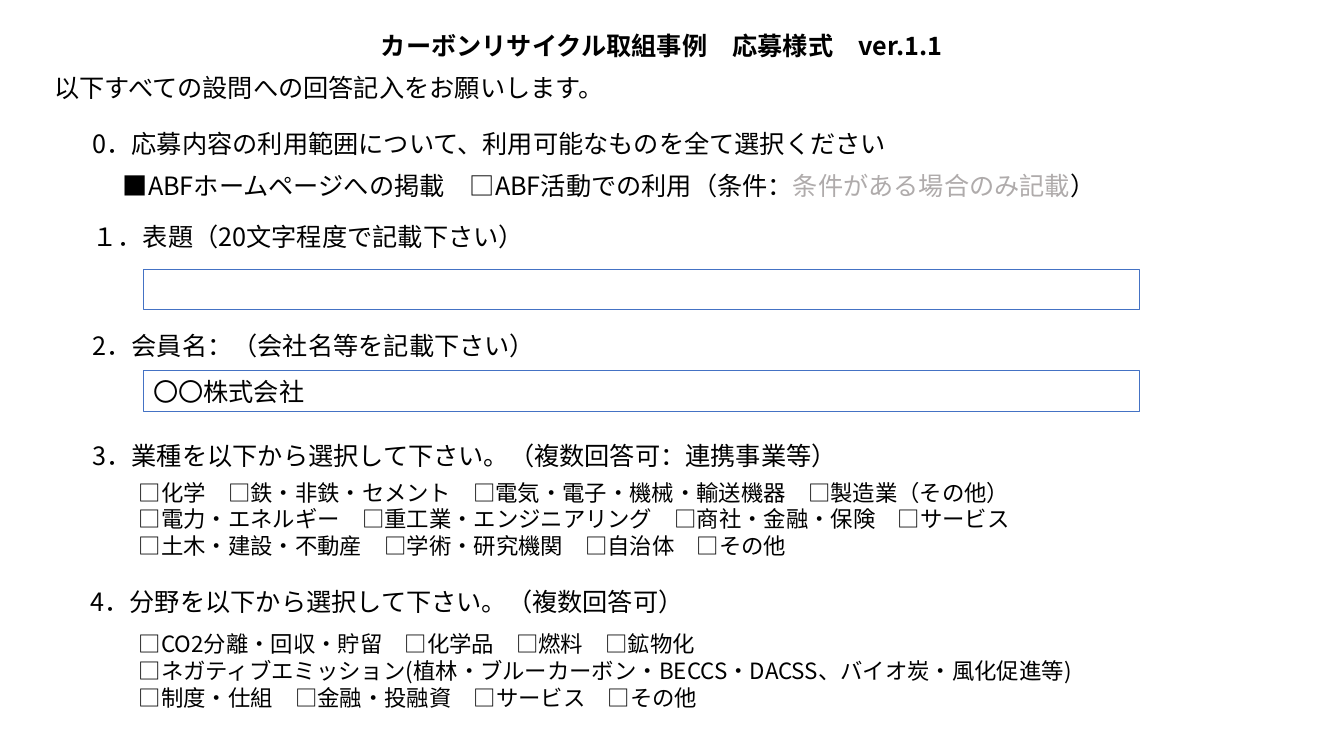
"""Build the application form slide with its questions, entry boxes and check lists."""
from lxml import etree
from pptx import Presentation, util as u
from pptx.dml.color import RGBColor
from pptx.enum import shapes, text
from pptx.oxml.ns import qn

THEME = {
    "font": "Noto Sans CJK JP",
    "ink": "000000",
    "hint": "AFABAB",
    "edge": "4472C4",
    "head": 18,
    "list": 16,
    "lead": 1.2,
    "rule": 0.75,
}
ROW = 0.4
LEFT, WIDE = 1.42, 9.88

HEADS = [
    (3.68, 0.25, 6.23, "カーボンリサイクル取組事例　応募様式　ver.1.1", True),
    (0.44, 0.67, 6.67, "以下すべての設問への回答記入をお願いします。", False),
    (0.82, 1.22, 8.38, "0．応募内容の利用範囲について、利用可能なものを全て選択ください", False),
    (0.82, 2.15, 4.63, "１．表題（20文字程度で記載下さい）", False),
    (0.82, 3.23, 4.63, "2．会員名：（会社名等を記載下さい）", False),
    (0.82, 4.32, 8.18, "3．業種を以下から選択して下さい。（複数回答可：連携事業等）", False),
    (0.8, 5.77, 6.45, "4．分野を以下から選択して下さい。（複数回答可）", False),
]
SCOPE = [
    ("■ABFホームページへの掲載　□ABF活動での利用（条件：", "ink"),
    ("条件がある場合のみ記載", "hint"),
    ("）", "ink"),
]
BOXES = [(2.67, ""), (3.68, "〇〇株式会社")]
LISTS = [
    (4.7, 10.53, [
        "□化学　□鉄・非鉄・セメント　□電気・電子・機械・輸送機器　□製造業（その他）",
        "□電力・エネルギー　□重工業・エンジニアリング　□商社・金融・保険　□サービス",
        "□土木・建設・不動産　□学術・研究機関　□自治体　□その他",
    ]),
    (6.2, 11.11, [
        "□CO2分離・回収・貯留　□化学品　□燃料　□鉱物化",
        "□ネガティブエミッション(植林・ブルーカーボン・BECCS・DACSS、バイオ炭・風化促進等)",
        "□制度・仕組　□金融・投融資　□サービス　□その他",
    ]),
]


def color(name):
    return RGBColor.from_string(THEME[name])


def style(run, size, ink="ink", bold=False):
    font = run.font
    font.size, font.bold = u.Pt(THEME[size]), bold
    font.color.rgb = color(ink)
    font.name = THEME["font"]
    east = etree.SubElement(run._r.get_or_add_rPr(), qn("a:ea"))
    east.set("typeface", THEME["font"])


def write(frame, lines, size="head", align="LEFT", bold=False):
    frame.word_wrap = True
    for i, line in enumerate(lines):
        para = frame.add_paragraph() if i else frame.paragraphs[0]
        para.alignment = text.PP_ALIGN[align]
        para.line_spacing = u.Pt(THEME[size] * THEME["lead"])
        for words, ink in line:
            run = para.add_run()
            run.text = words
            style(run, size, ink, bold)


def label(slide, x, y, w, h, lines, **look):
    box = slide.shapes.add_textbox(*map(u.Inches, (x, y, w, h)))
    write(box.text_frame, lines, **look)


def entry(slide, y, words):
    box = slide.shapes.add_shape(
        shapes.MSO_SHAPE.RECTANGLE, *map(u.Inches, (LEFT, y, WIDE, ROW)))
    box.shadow.inherit = False
    box.fill.background()
    box.line.color.rgb = color("edge")
    box.line.width = u.Pt(THEME["rule"])
    box.text_frame.vertical_anchor = text.MSO_ANCHOR.MIDDLE
    if words:
        write(box.text_frame, [[(words, "ink")]])


def main():
    deck = Presentation()
    deck.slide_width, deck.slide_height = u.Inches(13.33), u.Inches(7.5)
    slide = deck.slides.add_slide(deck.slide_layouts[6])
    for x, y, w, words, bold in HEADS:
        label(slide, x, y, w, ROW, [[(words, "ink")]], bold=bold)
    label(slide, 1.12, 1.64, 11.27, ROW, [SCOPE], align="JUSTIFY")
    for y, words in BOXES:
        entry(slide, y, words)
    for y, w, lines in LISTS:
        label(slide, 1.28, y, w, 0.91, [[(line, "ink")] for line in lines],
              size="list", align="JUSTIFY")
    deck.save("out.pptx")


if __name__ == "__main__":
    main()
